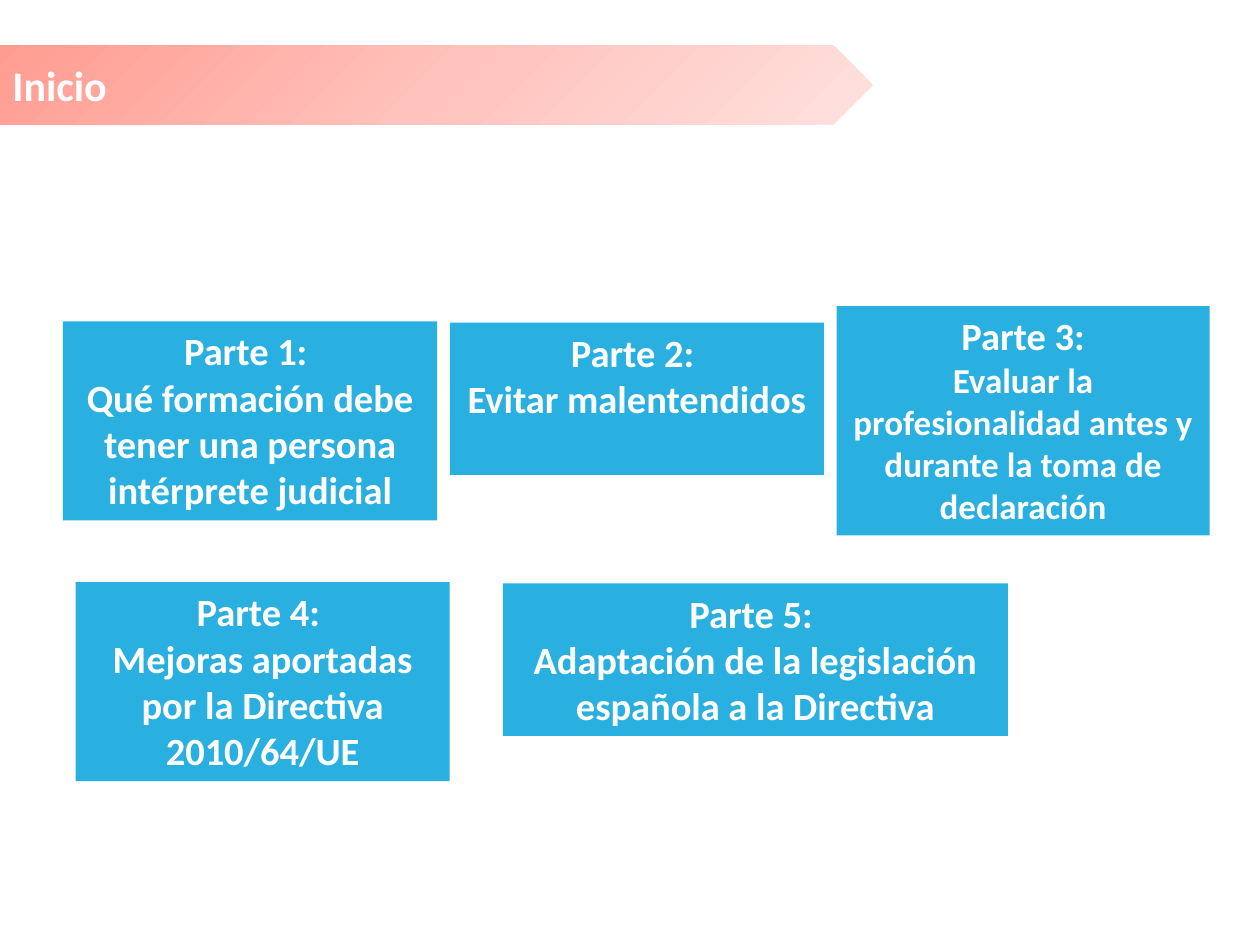
from lxml import etree
from pptx import Presentation
from pptx import util as u
from pptx.dml.color import RGBColor
from pptx.enum import shapes, text
from pptx.oxml import parse_xml
from pptx.oxml.ns import nsdecls, qn

COLORS = {"text": "FFFFFF", "box": "00A2DB",
          "near": "FF9C91", "middle": "FFC2BC", "far": "FFE1DE"}
FONT = "Calibri"

deck = Presentation()
deck.slide_width, deck.slide_height = u.Inches(10), u.Inches(7.5)
page = deck.slides.add_slide(deck.slide_layouts[6])
column = deck.slide_width / 100
row = deck.slide_height / 75


def add_block(kind, left, top, width, height, lines, sizes, align, anchor):
    block = page.shapes.add_shape(kind, round(left * column), round(top * row),
                                  round(width * column), round(height * row))
    block.shadow.inherit = False
    block.line.fill.background()
    frame = block.text_frame
    frame.word_wrap = True
    frame.vertical_anchor = anchor
    frame.text = "\n".join(lines)
    for para, size in zip(frame.paragraphs, sizes):
        para.alignment = align
        for span in para.runs:
            span.font.name = FONT
            span.font.size = u.Pt(size)
            span.font.bold = True
            span.font.color.rgb = RGBColor.from_string(COLORS["text"])
    return block


banner = add_block(shapes.MSO_SHAPE.PENTAGON, 0, 3.6, 69.3, 6.3, ["Inicio"], [24],
                   text.PP_ALIGN.LEFT, text.MSO_ANCHOR.MIDDLE)
stops = "".join(f'<a:gs pos="{place * 1000}"><a:srgbClr val="{COLORS[name]}"/></a:gs>'
                for place, name in ((0, "near"), (50, "middle"), (100, "far")))
gradient = parse_xml(
    f'<a:gradFill {nsdecls("a")} rotWithShape="1"><a:gsLst>{stops}</a:gsLst>'
    '<a:path path="circle"><a:fillToRect r="100000" b="100000"/></a:path></a:gradFill>')
banner.element.spPr.insert(2, gradient)

parts = [
    (5, 25.5, 29.7, 15.8, "Parte 1: ",
     "Qué formación debe tener una persona intérprete judicial", 22),
    (35.7, 25.6, 29.7, 12.1, "Parte 2: ", "Evitar malentendidos", 22),
    (66.4, 24.3, 29.6, 18.2, "Parte 3:",
     "Evaluar la profesionalidad antes y durante la toma de declaración", 20),
    (6, 46.2, 29.7, 15.8, "Parte 4: ",
     "Mejoras aportadas por la Directiva 2010/64/UE", 22),
    (39.9, 46.3, 40.1, 12.1, "Parte 5: ",
     "Adaptación de la legislación española a la Directiva", 22),
]
for left, top, width, height, heading, topic, size in parts:
    box = add_block(shapes.MSO_SHAPE.RECTANGLE, left, top, width, height,
                    [heading, topic], [22, size],
                    text.PP_ALIGN.CENTER, text.MSO_ANCHOR.TOP)
    box.fill.solid()
    box.fill.fore_color.rgb = RGBColor.from_string(COLORS["box"])
    tint = box.element.spPr.find(qn("a:solidFill")).find(qn("a:srgbClr"))
    etree.SubElement(tint, qn("a:alpha"), val="84000")

deck.save("out.pptx")
